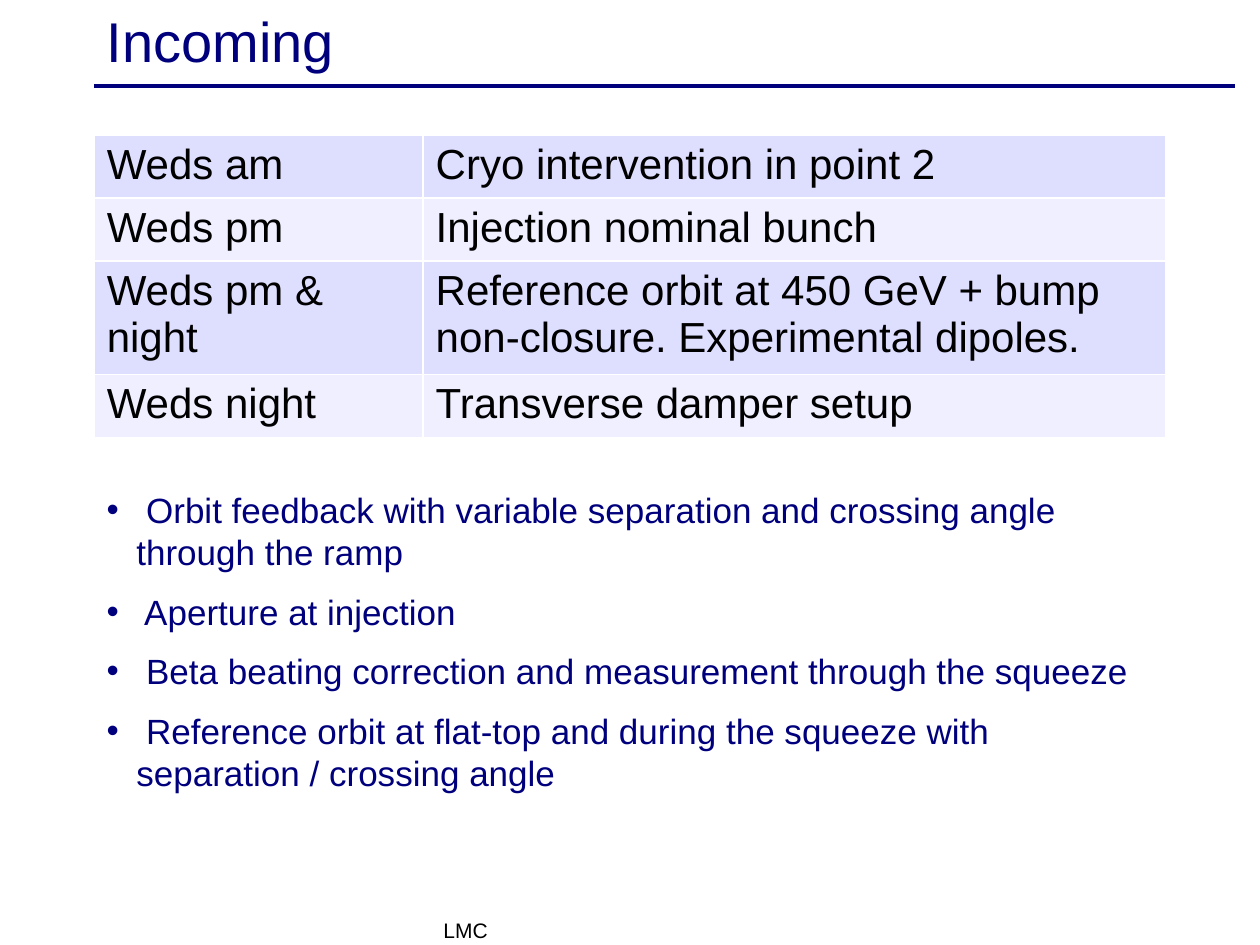
from lxml import etree
from pptx import Presentation
from pptx.dml.color import RGBColor
from pptx.enum.shapes import MSO_CONNECTOR
from pptx.enum.text import MSO_ANCHOR, PP_ALIGN
from pptx.oxml.ns import qn
from pptx.util import Cm, Pt

STRAIGHT = MSO_CONNECTOR.STRAIGHT
TOP, MIDDLE, BOTTOM = MSO_ANCHOR.TOP, MSO_ANCHOR.MIDDLE, MSO_ANCHOR.BOTTOM
LEFT = PP_ALIGN.LEFT

THEME = {
    "navy": RGBColor.from_string("00007D"),
    "black": RGBColor.from_string("000000"),
    "bands": [RGBColor.from_string("DEDEFF"), RGBColor.from_string("EFEFFF")],
    "border": "FFFFFF",
    "font": "Arial",
    "title": Pt(32),
    "table": Pt(24),
    "list": Pt(20),
    "footer": Pt(12),
}


def write(para, text, size, color):
    para.alignment = LEFT
    span = para.add_run()
    span.text = text
    for name, value in {"name": THEME["font"], "size": THEME[size]}.items():
        setattr(span.font, name, value)
    span.font.color.rgb = THEME[color]


def add_box(left, top, width, height, anchor):
    box = slide.shapes.add_textbox(Cm(left), Cm(top), Cm(width), Cm(height))
    frame = box.text_frame
    for name, value in {"word_wrap": True, "vertical_anchor": anchor}.items():
        setattr(frame, name, value)
    return frame


deck = Presentation()
deck.slide_width, deck.slide_height = Cm(25.4), Cm(19.05)
slide = deck.slides.add_slide(deck.slide_layouts[6])

rule = slide.shapes.add_connector(STRAIGHT, Cm(1.9), Cm(1.73), Cm(24.9), Cm(1.73))
rule.line.color.rgb = THEME["navy"]
rule.line.width = Pt(2)
etree.SubElement(rule._element.spPr, qn("a:effectLst"))

title = add_box(1.9, 0.08, 22.86, 1.45, MIDDLE)
write(title.paragraphs[0], "Incoming", "title", "navy")

footer = add_box(8.69, 18.42, 8.05, 0.71, BOTTOM)
write(footer.paragraphs[0], "LMC", "footer", "black")

schedule = [
    ("Weds am", "Cryo intervention in point 2"),
    ("Weds pm", "Injection nominal bunch"),
    ("Weds pm & night", "Reference orbit at 450 GeV + bump non-closure. Experimental dipoles."),
    ("Weds night ", "Transverse damper setup"),
]
widths = [6.63, 14.97]
row_height = 1.04
table = slide.shapes.add_table(
    len(schedule), len(widths), Cm(1.9), Cm(2.72),
    Cm(sum(widths)), Cm(row_height * len(schedule)),
).table
for name in ("first_row", "horz_banding"):
    setattr(table, name, False)
for column, width in zip(table.columns, widths):
    column.width = Cm(width)
for index, entries in enumerate(schedule):
    table.rows[index].height = Cm(row_height)
    for cell, text in zip(table.rows[index].cells, entries):
        write(cell.text_frame.paragraphs[0], text, "table", "black")
        cell.fill.solid()
        cell.fill.fore_color.rgb = THEME["bands"][index % 2]
        properties = cell._tc.get_or_add_tcPr()
        for place, edge in enumerate(("a:lnL", "a:lnR", "a:lnT", "a:lnB")):
            border = etree.Element(qn(edge), w=str(Pt(1)))
            paint = etree.SubElement(border, qn("a:solidFill"))
            etree.SubElement(paint, qn("a:srgbClr"), val=THEME["border"])
            properties.insert(place, border)

tasks = [
    " Orbit feedback with variable separation and crossing angle through the ramp",
    " Aperture at injection",
    " Beta beating correction and measurement through the squeeze",
    " Reference orbit at flat-top and during the squeeze with separation / crossing angle",
]
task_list = add_box(1.9, 9.73, 21.21, 7.95, TOP)
for index, task in enumerate(tasks):
    para = task_list.add_paragraph() if index else task_list.paragraphs[0]
    layout = para._p.get_or_add_pPr()
    layout.set("marL", str(Cm(0.6)))
    layout.set("indent", str(-Cm(0.6)))
    etree.SubElement(layout, qn("a:buFont"), typeface=THEME["font"])
    etree.SubElement(layout, qn("a:buChar"), char="•")
    para.space_before = Pt(10 if index else 0)
    write(para, task, "list", "navy")

deck.save("out.pptx")
